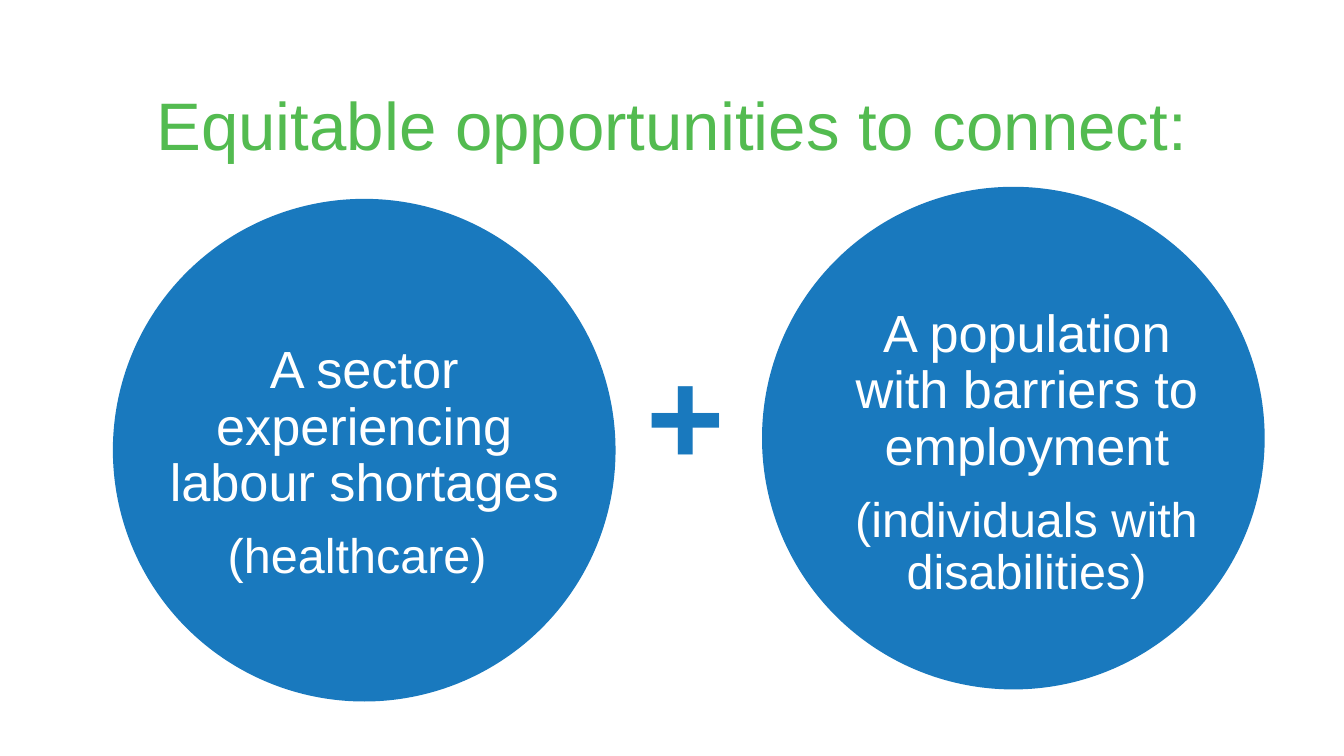
"""Build a slide that joins two circled ideas with a plus sign."""
from dataclasses import dataclass

from pptx import Presentation
from pptx.dml.color import RGBColor
from pptx.enum.shapes import MSO_SHAPE
from pptx.enum.text import MSO_ANCHOR, MSO_AUTO_SIZE, PP_ALIGN
from pptx.oxml.ns import qn
from pptx.shapes.base import BaseShape
from pptx.slide import Slide
from pptx.util import Inches, Pt

BLUE = RGBColor(0x19, 0x79, 0xBE)
GREEN = RGBColor(0x53, 0xBB, 0x50)
WHITE = RGBColor(0xFF, 0xFF, 0xFF)
FONT = "Arial"
SLIDE_WIDTH = 10
SLIDE_HEIGHT = SLIDE_WIDTH * 9 / 16
DIAMETER = 3.74
TWO_CONTENT = 3


@dataclass(frozen=True)
class Line:
    text: str
    size: float
    color: RGBColor = WHITE
    bold: bool = False


@dataclass(frozen=True)
class Box:
    left: float
    top: float
    width: float
    height: float
    top_inset: float = 0.05


@dataclass(frozen=True)
class Idea:
    circle_left: float
    circle_top: float
    box: Box
    lines: tuple[Line, ...]


TITLE = Line("Equitable opportunities to connect:", 36, GREEN)
TITLE_BOX = Box(0, 0.43, SLIDE_WIDTH, 1.05)
PLUS = Line("+", 72, BLUE, bold=True)
PLUS_BOX = Box(4.56, 2.5, 1.08, 1.28)
IDEAS = (
    Idea(0.84, 1.48, Box(0.98, 1.99, 3.46, 2.92), (
        Line("A sector experiencing labour shortages", 28),
        Line("(healthcare) ", 26),
    )),
    Idea(5.67, 1.39, Box(6.2, 1.99, 2.88, 2.2, top_inset=0.62), (
        Line("A population with barriers to employment", 28),
        Line("(individuals with disabilities)", 26),
    )),
)


def add_circle(slide: Slide, left: float, top: float) -> None:
    circle = slide.shapes.add_shape(
        MSO_SHAPE.OVAL, Inches(left), Inches(top), Inches(DIAMETER), Inches(DIAMETER))
    circle.shadow.inherit = False
    circle.fill.solid()
    circle.fill.fore_color.rgb = BLUE
    circle.line.fill.background()
    circle.element.getparent().insert(2, circle.element)


def write_lines(shape: BaseShape, box: Box, lines: tuple[Line, ...]) -> None:
    shape.left, shape.top = Inches(box.left), Inches(box.top)
    shape.width, shape.height = Inches(box.width), Inches(box.height)
    frame = shape.text_frame
    frame.word_wrap = True
    frame.auto_size = MSO_AUTO_SIZE.NONE
    frame.vertical_anchor = MSO_ANCHOR.MIDDLE
    frame.margin_left = frame.margin_right = Inches(0.1)
    frame.margin_top, frame.margin_bottom = Inches(box.top_inset), Inches(0.05)
    frame.text = "\n".join(line.text for line in lines)
    for index, (paragraph, line) in enumerate(zip(frame.paragraphs, lines)):
        paragraph.alignment = PP_ALIGN.CENTER
        paragraph.line_spacing = 0.9
        paragraph.space_before = paragraph.space_after = Pt(10 if index else 0)
        properties = paragraph._p.get_or_add_pPr()
        properties.set("marL", "0")
        properties.set("indent", "0")
        properties.append(properties.makeelement(qn("a:buNone"), {}))
        for run in paragraph.runs:
            run.font.name = FONT
            run.font.size = Pt(line.size)
            run.font.bold = line.bold
            run.font.color.rgb = line.color


def main() -> None:
    presentation = Presentation()
    presentation.slide_width = Inches(SLIDE_WIDTH)
    presentation.slide_height = Inches(SLIDE_HEIGHT)
    slide = presentation.slides.add_slide(presentation.slide_layouts[TWO_CONTENT])
    write_lines(slide.shapes.title, TITLE_BOX, (TITLE,))
    for position, idea in enumerate(IDEAS, start=1):
        add_circle(slide, idea.circle_left, idea.circle_top)
        write_lines(slide.placeholders[position], idea.box, idea.lines)
    write_lines(slide.shapes.add_textbox(0, 0, 0, 0), PLUS_BOX, (PLUS,))
    presentation.save("out.pptx")


if __name__ == "__main__":
    main()
